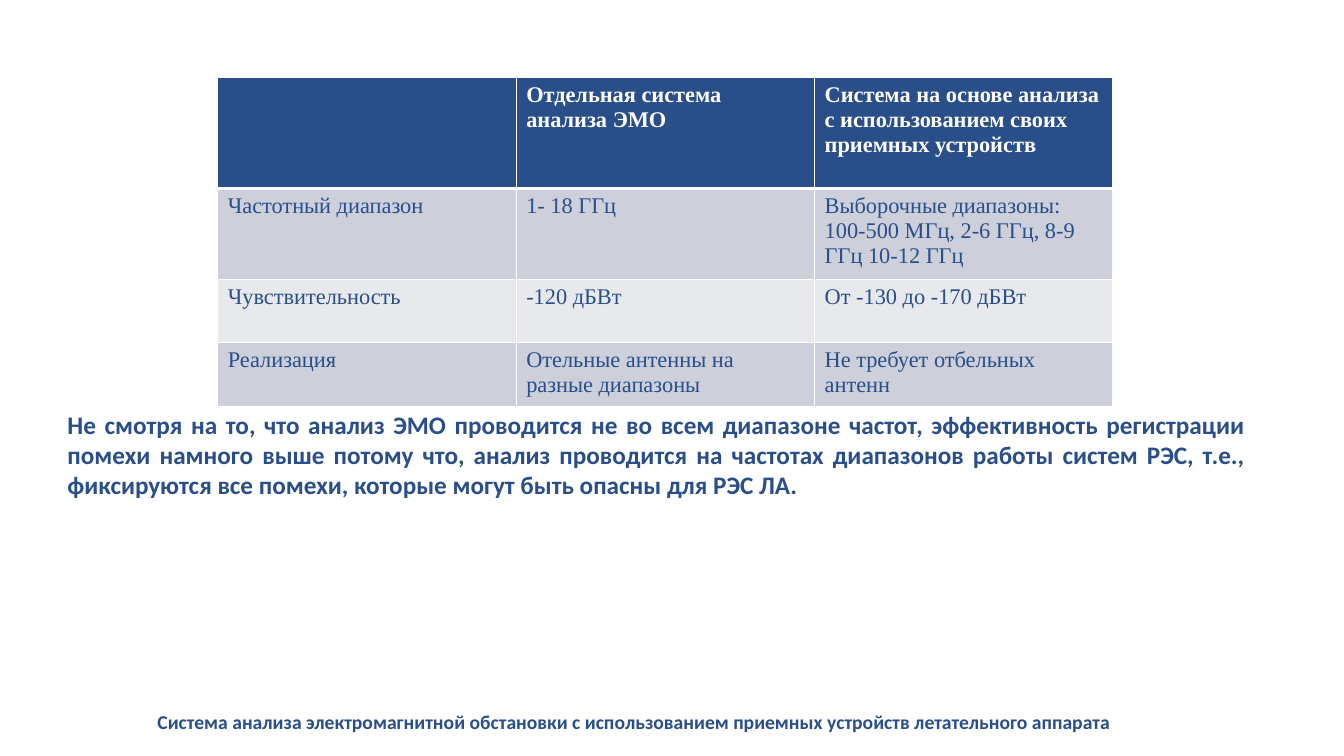
from lxml import etree
from pptx import Presentation
from pptx import util as u
from pptx.dml.color import RGBColor
from pptx.enum import text
from pptx.oxml.ns import qn

WHITE, BLUE = "FFFFFF", "294E8A"
BANDS = ["CDD0DA", "E8E9ED"]


def color(value):
    return RGBColor.from_string(value)


class SlideBuilder:
    """Holds the style and the current slide."""
    body_font, table_font = "Calibri", "Times New Roman"
    table_size = 16

    def __init__(self, slide):
        self.slide = slide

    def set_font(self, paragraph, name, size, fill, bold):
        font = paragraph.font
        font.name, font.size, font.bold = name, u.Pt(size), bold
        font.color.rgb = color(fill)

    def add_text(self, content, left, top, width, height, size, align):
        box = self.slide.shapes.add_textbox(
            u.Inches(left), u.Inches(top), u.Inches(width), u.Inches(height))
        box.text_frame.word_wrap = True
        paragraph = box.text_frame.paragraphs[0]
        paragraph.text = content
        paragraph.alignment = align
        self.set_font(paragraph, self.body_font, size, BLUE, True)

    def set_borders(self, cell, widths):
        properties = cell._tc.get_or_add_tcPr()
        for index, (side, width) in enumerate(widths.items()):
            line = etree.Element(qn("a:ln" + side), w=str(u.Pt(width)))
            fill = etree.SubElement(line, qn("a:solidFill"))
            etree.SubElement(fill, qn("a:srgbClr"), val=WHITE)
            properties.insert(index, line)

    def add_table(self, rows, left, top, column_width, row_heights):
        columns = len(rows[0])
        table = self.slide.shapes.add_table(
            len(rows), columns, u.Inches(left), u.Inches(top),
            u.Inches(column_width * columns), u.Inches(sum(row_heights))).table
        for column in table.columns:
            column.width = u.Inches(column_width)
        for r, (values, height) in enumerate(zip(rows, row_heights)):
            table.rows[r].height = u.Inches(height)
            header = r == 0
            for c, value in enumerate(values):
                cell = table.cell(r, c)
                cell.text = value
                cell.fill.solid()
                cell.fill.fore_color.rgb = color(BLUE if header else BANDS[(r - 1) % 2])
                self.set_font(cell.text_frame.paragraphs[0], self.table_font,
                              self.table_size, WHITE if header else BLUE, header)
                self.set_borders(cell, {"L": 1, "R": 1, "T": 3 if r == 1 else 1,
                                        "B": 3 if header else 1})


def main():
    presentation = Presentation()
    presentation.slide_width = u.Inches(13.33)
    presentation.slide_height = u.Inches(7.5)
    builder = SlideBuilder(presentation.slides.add_slide(presentation.slide_layouts[6]))

    # Footer title
    builder.add_text(
        "Система анализа электромагнитной обстановки с использованием "
        "приемных устройств летательного аппарата",
        0.28, 6.99, 12.02, 0.34, 14, text.PP_ALIGN.CENTER)

    # Comparison of the two systems
    builder.add_table([
        ["", "Отдельная система анализа ЭМО",
         "Система на основе анализа с использованием своих приемных устройств"],
        ["Частотный диапазон", "1- 18 ГГц",
         "Выборочные диапазоны: 100-500 МГц, 2-6 ГГц, 8-9 ГГц 10-12 ГГц"],
        ["Чувствительность", "-120 дБВт", "От -130 до -170 дБВт"],
        ["Реализация", "Отельные антенны на разные диапазоны",
         "Не требует отбельных антенн"],
    ], 2.16, 0.77, 2.96, [1.1, 0.84, 0.63, 0.6])

    # Conclusion
    builder.add_text(
        "Не смотря на то, что анализ ЭМО проводится не во всем диапазоне частот, "
        "эффективность регистрации помехи намного выше потому что, анализ проводится "
        "на частотах диапазонов работы систем РЭС, т.е., фиксируются все помехи, "
        "которые могут быть опасны для РЭС ЛА.",
        0.57, 4.01, 11.88, 1.01, 18, text.PP_ALIGN.JUSTIFY)

    presentation.save("out.pptx")


if __name__ == "__main__":
    main()
